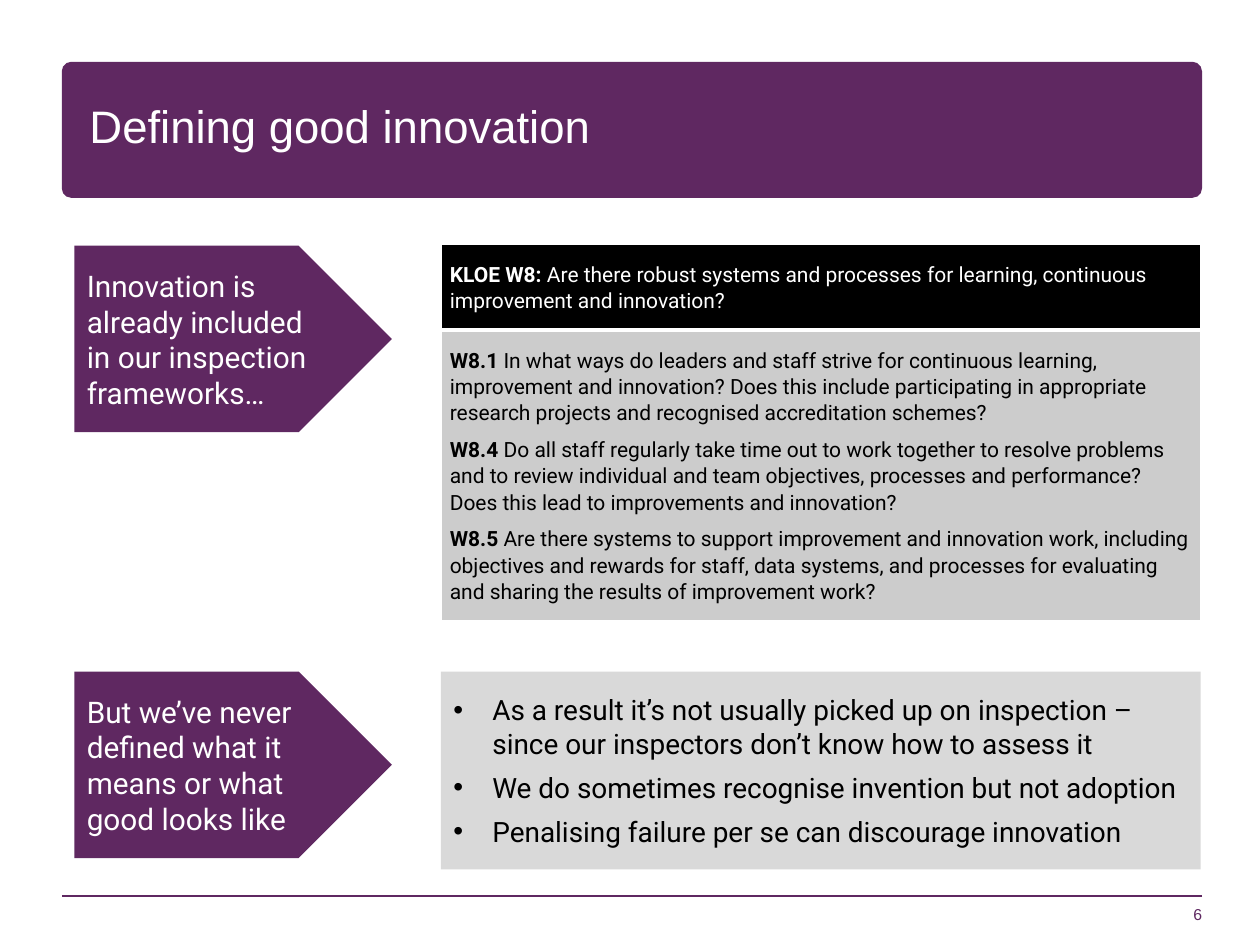
from lxml.etree import SubElement
from pptx import Presentation
from pptx.dml.color import RGBColor
from pptx.enum.shapes import MSO_CONNECTOR as CONN, MSO_SHAPE as SHAPE
from pptx.enum.text import MSO_ANCHOR as ANCHOR, PP_ALIGN as ALIGN
from pptx.oxml.ns import qn
from pptx.util import Inches, Pt

TITLE = "Defining good innovation"
PAGE = "6"
ARROWS = [
    (1.95, "Innovation is already included in our inspection frameworks…"),
    (5.33, "But we’ve never defined what it means or what good looks like"),
]
# Each paragraph is a bold label followed by regular text.
HEADER = [("KLOE W8: ", "Are there robust systems and processes for learning, "
           "continuous improvement and innovation?")]
QUESTIONS = [
    ("W8.1", " In what ways do leaders and staff strive for continuous learning, "
     "improvement and innovation? Does this include participating in appropriate "
     "research projects and recognised accreditation schemes?"),
    ("W8.4 ", "Do all staff regularly take time out to work together to resolve "
     "problems and to review individual and team objectives, processes and "
     "performance? Does this lead to improvements and innovation?"),
    ("W8.5", " Are there systems to support improvement and innovation work, "
     "including objectives and rewards for staff, data systems, and processes for "
     "evaluating and sharing the results of improvement work?"),
]
BULLETS = [
    "As a result it’s not usually picked up on inspection – since our inspectors "
    "don’t know how to assess it",
    "We do sometimes recognise invention but not adoption",
    "Penalising failure per se can discourage innovation",
]


class Theme:
    purple, white, black = "5F2861", "FFFFFF", "000000"
    cell_grey, box_grey = "CCCCCC", "D9D9D9"
    heading, body = "Arial", "Roboto"
    title, arrow, bullet, table, page = 26, 17, 16, 12, 9


LEFT, RIGHT = 0.49, 9.54
COLUMN_X, COLUMN_W = 3.5, 6.03


def inches(*values):
    return [Inches(v) for v in values]


def add_run(p, text, size, color, font=Theme.body, bold=False):
    r = p.add_run()
    r.text = text
    r.font.name, r.font.size, r.font.bold = font, Pt(size), bold
    r.font.color.rgb = RGBColor.from_string(color)


def paragraphs(tf, items):
    """Yield each item with its own paragraph, using the existing one first."""
    for i, item in enumerate(items):
        yield (tf.add_paragraph() if i else tf.paragraphs[0]), item


def set_frame(tf, anchor, margin=None):
    tf.word_wrap = True
    tf.vertical_anchor = anchor
    if margin is not None:
        tf.margin_left = tf.margin_right = Inches(margin)
        tf.margin_top = tf.margin_bottom = Inches(margin)


def add_block(slide, kind, box, color):
    s = slide.shapes.add_shape(kind, *inches(*box))
    s.shadow.inherit = False
    s.fill.solid()
    s.fill.fore_color.rgb = RGBColor.from_string(color)
    s.line.fill.background()
    set_frame(s.text_frame, ANCHOR.MIDDLE)
    return s


def add_bullet(p, indent):
    pPr = p._p.get_or_add_pPr()
    pPr.set("marL", str(Inches(indent)))
    pPr.set("indent", str(-Inches(indent)))
    SubElement(pPr, qn("a:buFont"), typeface="Arial")
    SubElement(pPr, qn("a:buChar"), char="•")


def set_borders(cell, top, bottom):
    """Draw white borders; they must precede the fill in the cell properties."""
    tcPr = cell._tc.get_or_add_tcPr()
    sides = [("L", 1), ("R", 1), ("T", top), ("B", bottom)]
    for i, (side, width) in enumerate(sides):
        ln = SubElement(tcPr, qn("a:ln" + side), w=str(Pt(width)))
        fill = SubElement(ln, qn("a:solidFill"))
        SubElement(fill, qn("a:srgbClr"), val=Theme.white)
        tcPr.insert(i, ln)


def add_frame(slide):
    """Banner with title, footer rule and page number."""
    banner = add_block(slide, SHAPE.ROUNDED_RECTANGLE,
                       (LEFT, 0.49, RIGHT - LEFT, 1.08), Theme.purple)
    banner.adjustments[0] = 0.07

    title = slide.shapes.title
    title.left, title.top, title.width, title.height = inches(0.71, 0.53, 6.1, 0.99)
    banner._element.addnext(title._element)
    set_frame(title.text_frame, ANCHOR.MIDDLE, 0)
    p = title.text_frame.paragraphs[0]
    p.alignment, p.line_spacing = ALIGN.LEFT, 0.85
    add_run(p, TITLE, Theme.title, Theme.white, Theme.heading)

    rule = slide.shapes.add_connector(CONN.STRAIGHT, *inches(RIGHT, 7.11, LEFT, 7.11))
    rule.line.color.rgb = RGBColor.from_string(Theme.purple)
    rule.line.width = Pt(1)
    SubElement(rule._element.spPr, qn("a:effectLst"))

    page = slide.shapes.add_textbox(*inches(RIGHT - 2.08, 6.83, 2.08, 0.5))
    set_frame(page.text_frame, ANCHOR.BOTTOM, 0)
    p = page.text_frame.paragraphs[0]
    p.alignment = ALIGN.RIGHT
    add_run(p, PAGE, Theme.page, Theme.purple, Theme.heading)


def add_questions(slide):
    rows = [  # height, fill, text colour, top and bottom border, paragraphs
        (0.68, Theme.black, Theme.white, 1, 3, HEADER),
        (2.31, Theme.cell_grey, Theme.black, 3, 1, QUESTIONS),
    ]
    height = sum(row[0] for row in rows)
    table = slide.shapes.add_table(
        len(rows), 1, *inches(COLUMN_X, 1.94, COLUMN_W, height)).table
    for i, (h, fill, color, top, bottom, items) in enumerate(rows):
        table.rows[i].height = Inches(h)
        cell = table.cell(i, 0)
        cell.fill.solid()
        cell.fill.fore_color.rgb = RGBColor.from_string(fill)
        set_borders(cell, top, bottom)
        cell.vertical_anchor = ANCHOR.MIDDLE
        cell.margin_left = cell.margin_right = Inches(0.07)
        cell.margin_top = cell.margin_bottom = 0
        for p, (label, text) in paragraphs(cell.text_frame, items):
            p.line_spacing = 1.07
            p.space_before = p.space_after = Pt(3)
            add_run(p, label, Theme.table, color, bold=True)
            add_run(p, text, Theme.table, color)


def add_arrows(slide):
    for y, text in ARROWS:
        s = add_block(slide, SHAPE.PENTAGON, (0.59, y, 2.52, 1.48), Theme.purple)
        p = s.text_frame.paragraphs[0]
        p.alignment = ALIGN.LEFT
        add_run(p, text, Theme.arrow, Theme.white)


def add_consequences(slide):
    s = add_block(slide, SHAPE.RECTANGLE, (COLUMN_X, ARROWS[1][0], COLUMN_W, 1.57),
                  Theme.box_grey)
    for p, text in paragraphs(s.text_frame, BULLETS):
        p.alignment, p.space_after = ALIGN.LEFT, Pt(6)
        add_bullet(p, 0.31)
        add_run(p, text, Theme.bullet, Theme.black)


def main():
    prs = Presentation()
    prs.slide_width, prs.slide_height = inches(10, 7.5)
    slide = prs.slides.add_slide(prs.slide_layouts[5])
    add_frame(slide)
    add_questions(slide)
    add_arrows(slide)
    add_consequences(slide)
    prs.save("out.pptx")


if __name__ == "__main__":
    main()
